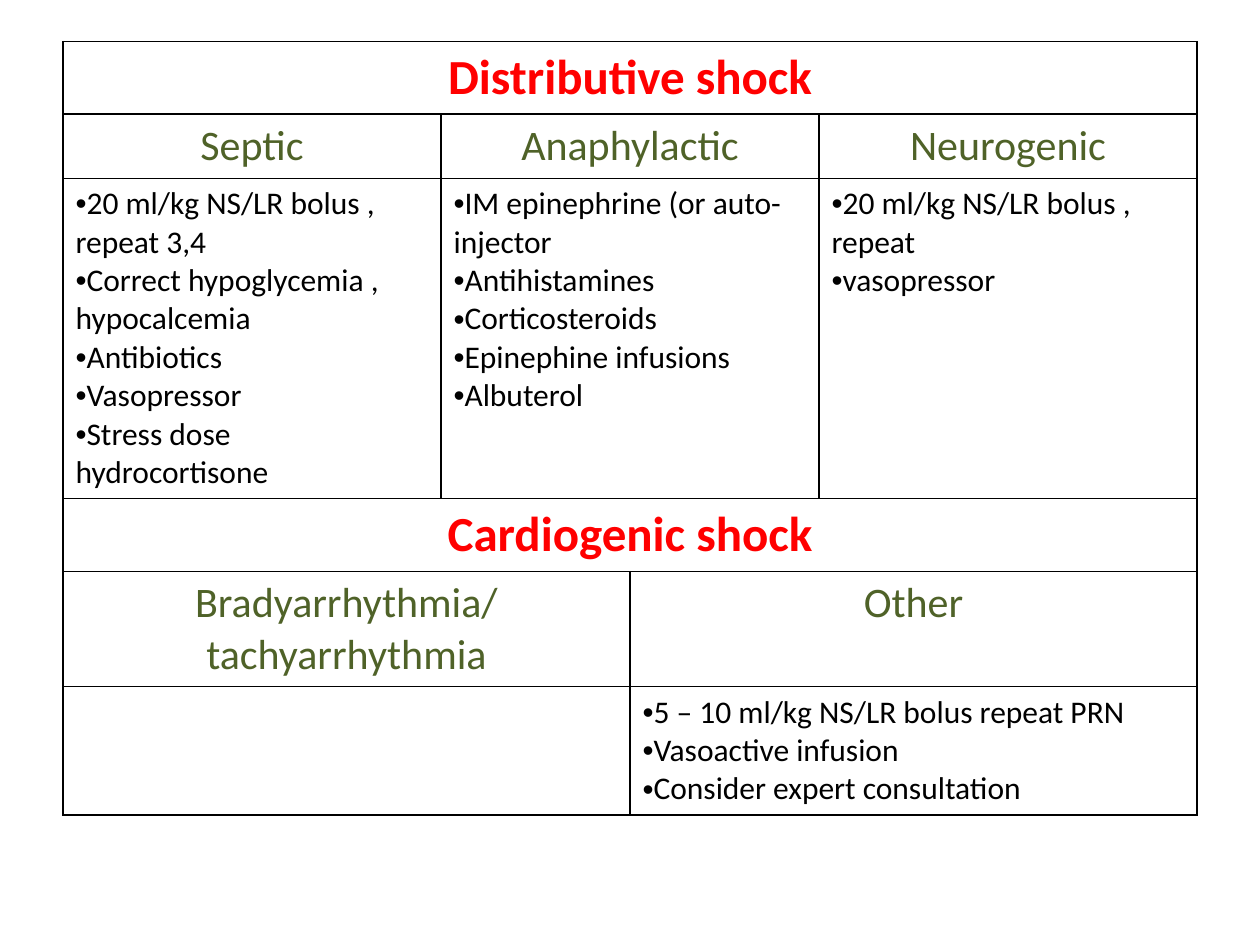
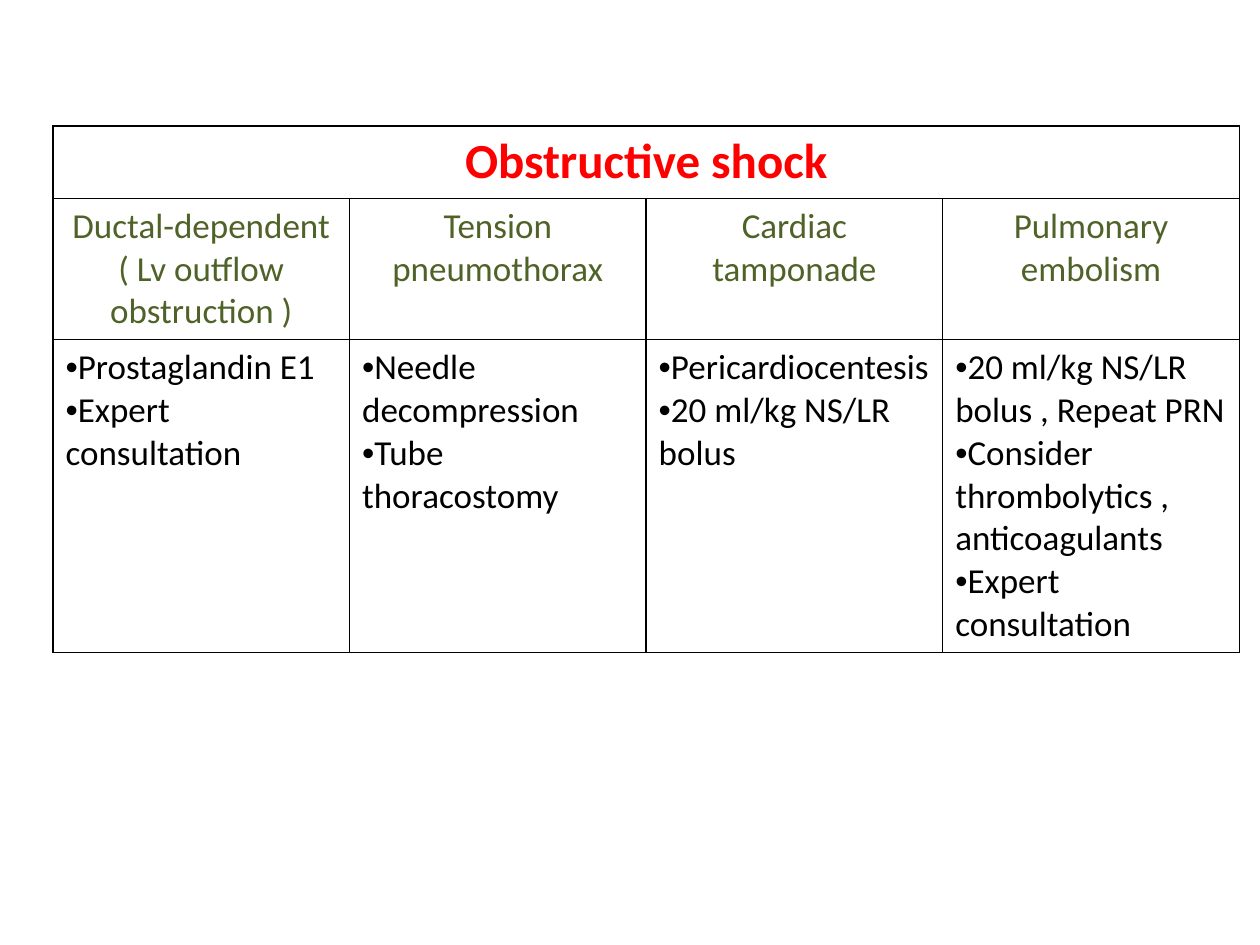
from lxml import etree
from pptx import Presentation
from pptx.dml.color import RGBColor
from pptx.enum.text import PP_ALIGN
from pptx.oxml.ns import qn
from pptx.util import Inches, Pt

CENTER, LEFT = PP_ALIGN.CENTER, PP_ALIGN.LEFT
COLORS = {"heading": "FF0000", "type": "4F6228", "text": "000000", "line": "000000"}
FONT = "Calibri"
GRID_COLS, GRID_ROWS = 100, 75
BLANK = 6


class Deck:
    """Holds the shared style and the current slide."""

    def __init__(self):
        self.prs = Presentation()
        self.prs.slide_width, self.prs.slide_height = Inches(10), Inches(7.5)
        self.s = None

    def x(self, cols):
        return round(self.prs.slide_width * cols / GRID_COLS)

    def y(self, rows):
        return round(self.prs.slide_height * rows / GRID_ROWS)

    def slide(self):
        self.s = self.prs.slides.add_slide(self.prs.slide_layouts[BLANK])

    def borders(self, cell):
        tcPr = cell._tc.get_or_add_tcPr()
        for side in ("a:lnL", "a:lnR", "a:lnT", "a:lnB"):
            ln = etree.SubElement(tcPr, qn(side), w=str(Pt(1)))
            fill = etree.SubElement(ln, qn("a:solidFill"))
            etree.SubElement(fill, qn("a:srgbClr"), val=COLORS["line"])

    def bullet(self, p):
        pPr = p._p.get_or_add_pPr()
        pPr.set("marL", "0")
        pPr.set("indent", "0")
        etree.SubElement(pPr, qn("a:buFont"), typeface="Arial")
        etree.SubElement(pPr, qn("a:buChar"), char="•")

    def cell_text(self, cell, kind, size, lines):
        tf = cell.text_frame
        for i, line in enumerate(lines):
            p = tf.paragraphs[0] if i == 0 else tf.add_paragraph()
            p.alignment = LEFT if kind == "text" else CENTER
            if kind == "text":
                self.bullet(p)
            r = p.add_run()
            r.text = line
            r.font.name, r.font.size = FONT, Pt(size)
            r.font.bold = kind == "heading"
            r.font.color.rgb = RGBColor.from_string(COLORS[kind])

    def table(self, left, top, widths, heights, sizes, rows):
        """Each row is (kind, cells); each cell is (columns spanned, lines)."""
        frame = self.s.shapes.add_table(
            len(heights), len(widths), self.x(left), self.y(top),
            self.x(sum(widths)), self.y(sum(heights)))
        table = frame.table
        table.first_row = table.horz_banding = False
        for column, width in zip(table.columns, widths):
            column.width = self.x(width)
        for row, height in zip(table.rows, heights):
            row.height = self.y(height)
        for cell in table.iter_cells():
            self.borders(cell)
            cell.fill.background()
        for i, (kind, cells) in enumerate(rows):
            j = 0
            for span, lines in cells:
                cell = table.cell(i, j)
                if span > 1:
                    cell.merge(table.cell(i, j + span - 1))
                self.cell_text(cell, kind, sizes[kind], lines)
                j += span


def main():
    deck = Deck()

    # Distributive and cardiogenic shock
    deck.slide()
    deck.table(5, 3.3, [30, 15, 15, 30], [5.7, 5.1, 25.4, 5.8, 9.1, 10.2],
               {"heading": 28, "type": 24, "text": 18}, [
        ("heading", [(4, ["Distributive shock"])]),
        ("type", [(1, ["Septic"]), (2, ["Anaphylactic"]), (1, ["Neurogenic"])]),
        ("text", [
            (1, ["20 ml/kg NS/LR bolus , repeat 3,4",
                 "Correct hypoglycemia , hypocalcemia",
                 "Antibiotics", "Vasopressor", "Stress dose hydrocortisone"]),
            (2, ["IM epinephrine (or auto-injector", "Antihistamines",
                 "Corticosteroids", "Epinephine infusions", "Albuterol"]),
            (1, ["20 ml/kg NS/LR bolus , repeat", "vasopressor"])]),
        ("heading", [(4, ["Cardiogenic shock"])]),
        ("type", [(2, ["Bradyarrhythmia/", "tachyarrhythmia"]), (2, ["Other"])]),
        ("text", [
            (2, []),
            (2, ["5 – 10 ml/kg NS/LR bolus repeat PRN", "Vasoactive infusion",
                 "Consider expert consultation"])]),
    ])

    # Obstructive shock
    deck.slide()
    deck.table(4.2, 10, [23.54] * 4, [5.7, 11.2, 24.8],
               {"heading": 28, "type": 20, "text": 20}, [
        ("heading", [(4, ["Obstructive shock"])]),
        ("type", [
            (1, ["Ductal-dependent", "( Lv outflow obstruction )"]),
            (1, ["Tension pneumothorax"]),
            (1, ["Cardiac tamponade"]),
            (1, ["Pulmonary embolism"])]),
        ("text", [
            (1, ["Prostaglandin E1", "Expert consultation"]),
            (1, ["Needle decompression", "Tube thoracostomy"]),
            (1, ["Pericardiocentesis", "20 ml/kg NS/LR bolus"]),
            (1, ["20 ml/kg NS/LR bolus , Repeat PRN",
                 "Consider thrombolytics , anticoagulants",
                 "Expert consultation"])]),
    ])

    deck.prs.save("out.pptx")


if __name__ == "__main__":
    main()
